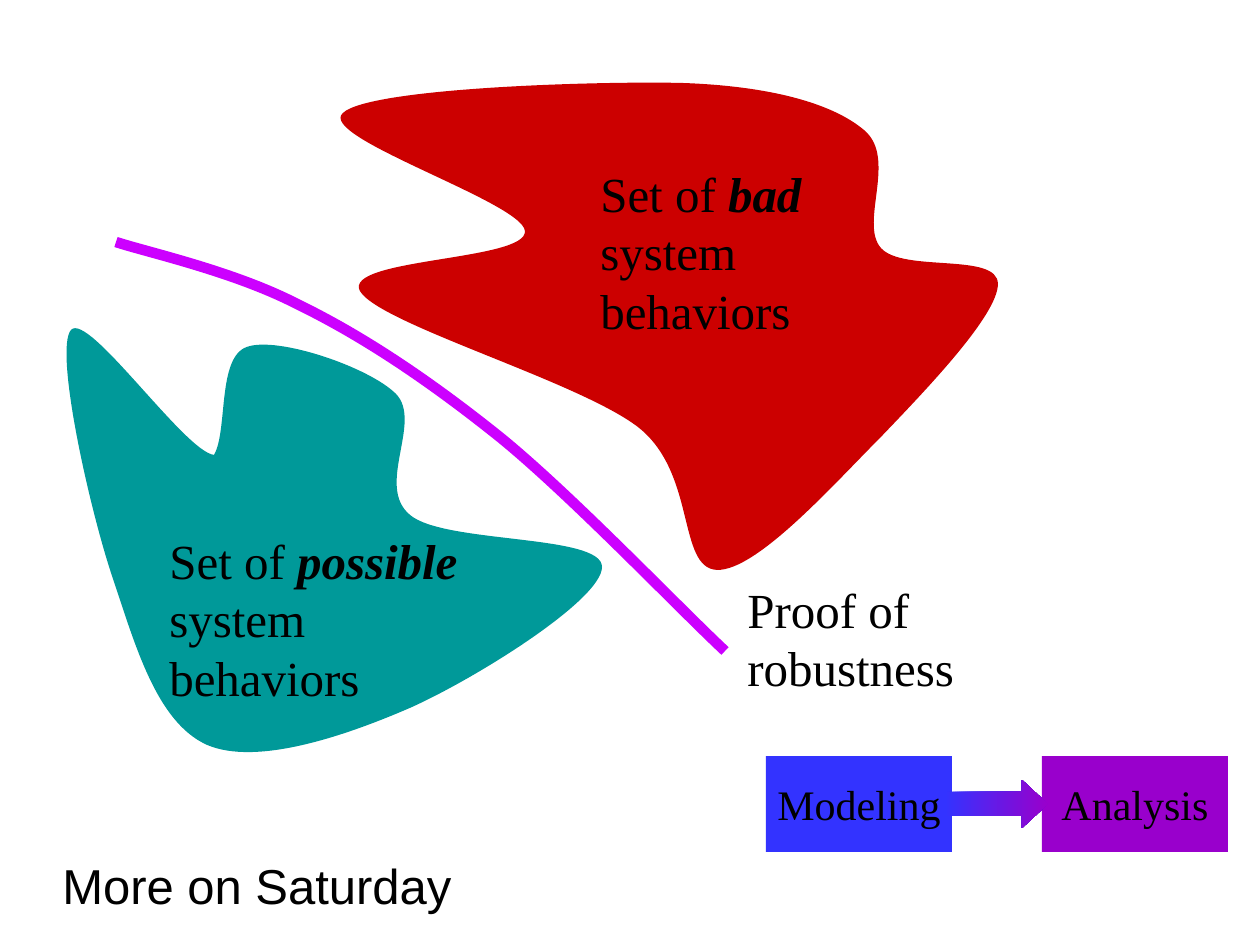
from dataclasses import dataclass

import lxml.etree
import pptx
import pptx.dml.color
import pptx.enum.shapes
import pptx.enum.text
import pptx.oxml.ns
import pptx.util

EMU_PER_PX = 914400 / 126
SERIF = "Times New Roman"
BLUE, PURPLE, BLACK = "3333FF", "9900CC", "000000"
Point = tuple[int, int]


@dataclass
class Curve:
    """A start point followed by Bézier triples: two controls and an end."""
    points: list[Point]
    color: str
    line_width: int = 0  # points; 0 means a closed, filled region


@dataclass
class Label:
    left: int
    top: int
    width: int
    height: int
    before: str
    emphasis: str = ""
    after: str = ""
    font: str = SERIF
    wrap: bool = True


@dataclass
class Step:
    left: int
    text: str
    color: str


POSSIBLE = Curve([
    (214, 455),
    (185, 452), (88, 311), (71, 330),
    (54, 350), (89, 507), (112, 576),
    (135, 644), (156, 722), (207, 745),
    (256, 766), (343, 737), (410, 708),
    (475, 679), (602, 600), (602, 567),
    (602, 534), (444, 544), (410, 515),
    (375, 486), (423, 422), (396, 394),
    (369, 367), (277, 336), (247, 347),
    (217, 357), (228, 431), (214, 455),
], "009999")
BAD = Curve([
    (343, 113),
    (316, 137), (522, 202), (525, 231),
    (528, 261), (343, 258), (360, 291),
    (379, 324), (578, 381), (638, 427),
    (697, 473), (677, 568), (717, 570),
    (757, 571), (834, 484), (881, 437),
    (927, 389), (998, 315), (998, 284),
    (998, 252), (903, 273), (881, 248),
    (859, 223), (898, 158), (864, 130),
    (832, 103), (769, 86), (682, 83),
    (595, 81), (369, 88), (343, 113),
], "CC0000")
PROOF = Curve([
    (116, 242),
    (146, 252), (233, 271), (297, 304),
    (363, 336), (430, 381), (501, 438),
    (572, 496), (678, 607), (725, 651),
], "CC00FF", 6)

LABELS = [
    Label(157, 524, 325, 189, "Set of ", "possible", " system behaviors"),
    Label(588, 157, 325, 189, "Set of ", "bad", " system behaviors"),
    Label(735, 573, 325, 130, "Proof of robustness"),
    Label(50, 849, 416, 72, "More on Saturday", font="Arial", wrap=False),
]
STEPS = [Step(766, "Modeling", BLUE), Step(1042, "Analysis", PURPLE)]


def px(length: int) -> int:
    return round(length * EMU_PER_PX)


def rgb(color: str) -> pptx.dml.color.RGBColor:
    return pptx.dml.color.RGBColor.from_string(color)


def style_font(font, name: str, size: int) -> None:
    font.name = name
    font.size = pptx.util.Pt(size)
    font.color.rgb = rgb(BLACK)


def add_preset(page, kind, left: int, top: int, width: int, height: int):
    shape = page.shapes.add_shape(kind, px(left), px(top), px(width), px(height))
    shape.shadow.inherit = False
    shape.line.fill.background()
    return shape


def draw_curve(page, curve: Curve) -> None:
    closed = curve.line_width == 0
    builder = page.shapes.build_freeform(*curve.points[0], scale=EMU_PER_PX)
    builder.add_line_segments(curve.points[1:], close=closed)
    shape = builder.convert_to_shape()
    shape.shadow.inherit = False
    # Merge every three line segments into one cubic Bézier segment
    qn = pptx.oxml.ns.qn
    segments = list(shape.element.iter(qn("a:lnTo")))
    for first in range(0, len(segments), 3):
        bezier = lxml.etree.Element(qn("a:cubicBezTo"))
        segments[first].addprevious(bezier)
        for segment in segments[first:first + 3]:
            bezier.append(segment[0])
            segment.getparent().remove(segment)
    if closed:
        shape.fill.solid()
        shape.fill.fore_color.rgb = rgb(curve.color)
        shape.line.fill.background()
    else:
        shape.fill.background()
        shape.line.color.rgb = rgb(curve.color)
        shape.line.width = pptx.util.Pt(curve.line_width)


def draw_label(page, label: Label) -> None:
    box = page.shapes.add_textbox(
        px(label.left), px(label.top), px(label.width), px(label.height))
    box.text_frame.word_wrap = label.wrap
    para = box.text_frame.paragraphs[0]
    for text in filter(None, (label.before, label.emphasis, label.after)):
        span = para.add_run()
        span.text = text
        style_font(span.font, label.font, 28)
        if text == label.emphasis:
            span.font.bold = span.font.italic = True


def draw_step(page, step: Step) -> None:
    box = add_preset(page, pptx.enum.shapes.MSO_SHAPE.RECTANGLE,
                     step.left, 756, 186, 96)
    box.fill.solid()
    box.fill.fore_color.rgb = rgb(step.color)
    frame = box.text_frame
    frame.text = step.text
    frame.word_wrap = False
    frame.vertical_anchor = pptx.enum.text.MSO_ANCHOR.MIDDLE
    para = frame.paragraphs[0]
    para.alignment = pptx.enum.text.PP_ALIGN.CENTER
    style_font(para.runs[0].font, SERIF, 24)


def draw_arrow(page) -> None:
    arrow = add_preset(page, pptx.enum.shapes.MSO_SHAPE.RIGHT_ARROW,
                       945, 780, 103, 48)
    arrow.adjustments[0] = 0.5
    arrow.adjustments[1] = 0.54
    arrow.fill.gradient()
    arrow.fill.gradient_angle = 0
    for stop, color in zip(arrow.fill.gradient_stops, (BLUE, PURPLE)):
        stop.color.rgb = rgb(color)


def main() -> None:
    deck = pptx.Presentation()
    deck.slide_width, deck.slide_height = px(1260), px(945)
    page = deck.slides.add_slide(deck.slide_layouts[6])

    # Modeling to analysis
    for step in STEPS:
        draw_step(page, step)
    draw_arrow(page)

    # Behavior regions and the proof that separates them
    for curve in (POSSIBLE, BAD, PROOF):
        draw_curve(page, curve)
    for label in LABELS:
        draw_label(page, label)

    deck.save("out.pptx")


if __name__ == "__main__":
    main()
